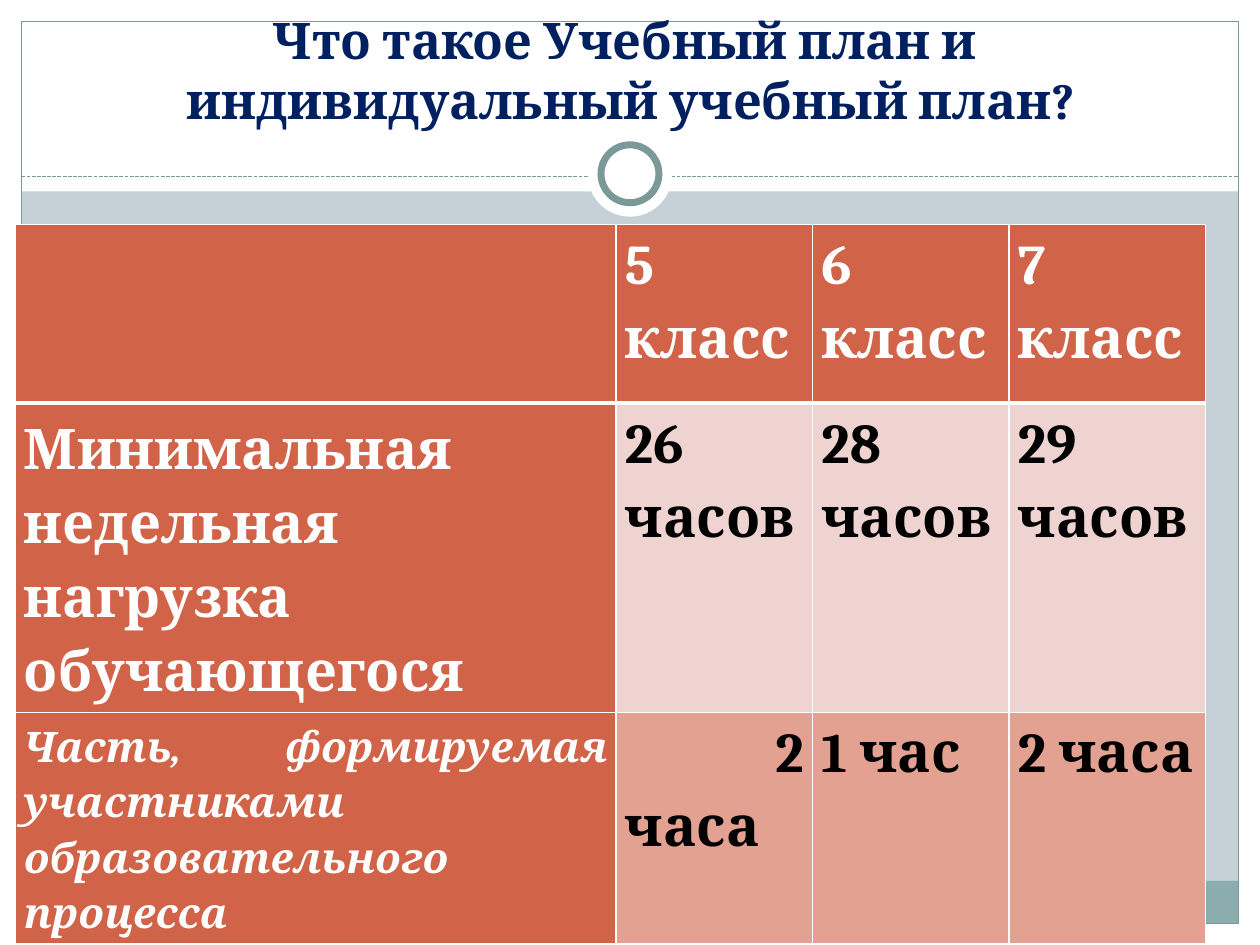
from dataclasses import dataclass
from typing import NamedTuple, Optional

from lxml.etree import SubElement
from pptx import Presentation
from pptx.dml.color import RGBColor
from pptx.enum.dml import MSO_LINE
from pptx.enum.shapes import MSO_CONNECTOR, MSO_SHAPE as Preset
from pptx.enum.text import MSO_ANCHOR as Anchor, PP_ALIGN as Align
from pptx.oxml.ns import qn
from pptx.util import Inches, Pt


@dataclass(frozen=True)
class Theme:
    font: str = "Cambria"
    white: str = "FFFFFF"
    black: str = "000000"
    navy: str = "002060"
    background: str = "C5D1D7"
    footer: str = "8CADAE"
    outline: str = "7C999A"
    header: str = "D16349"
    light_row: str = "EED3D0"
    dark_row: str = "E3A192"
    title_size: float = 28.8
    cell_size: float = 32
    note_size: float = 24


class Box(NamedTuple):
    left: float
    top: float
    width: float
    height: float


class Panel(NamedTuple):
    box: Box
    fill: Optional[str] = None
    line: Optional[str] = None
    line_width: float = 0.75
    preset: Preset = Preset.RECTANGLE


class Row(NamedTuple):
    height: float
    texts: tuple
    fill: str
    color: str
    label_size: float
    label_italic: bool = False
    bottom_border: float = 1


THEME = Theme()
WIDTH, HEIGHT = Inches(10), Inches(7.5)
MARGIN_X, MARGIN_Y = 1.7, 2.27
INNER_X, INNER_Y = 100 - 2 * MARGIN_X, 100 - 2 * MARGIN_Y
DIVIDER_Y = 18.67

PANELS = (
    Panel(Box(0, 100 - MARGIN_Y, 100, MARGIN_Y), THEME.white),
    Panel(Box(0, 0, 100, 20.27), THEME.white),
    Panel(Box(0, 0, MARGIN_X, 100), THEME.white),
    Panel(Box(100 - MARGIN_X, 0, MARGIN_X, 100), THEME.white),
    Panel(Box(MARGIN_X, 93.2, INNER_X, 4.53), THEME.footer),
    Panel(Box(MARGIN_X, MARGIN_Y, INNER_X, INNER_Y), line=THEME.outline),
)
RINGS = (
    Panel(Box(46.65, 14, 6.7, 8.93), THEME.white, preset=Preset.OVAL),
    Panel(Box(47.7, 15.33, 4.6, 6.13), THEME.white, THEME.outline, 4, Preset.OVAL),
)
TITLE = "Что такое Учебный план и \vиндивидуальный учебный план?"
COLUMNS = (47.7, 15.6, 15.6, 15.6)
ROWS = (
    Row(18.93, ("", "5 класс", "6 класс", "7 класс"),
        THEME.header, THEME.white, THEME.cell_size, bottom_border=3),
    Row(31.2, ("Минимальная недельная нагрузка обучающегося",
               "26 часов", "28 часов", "29\nчасов"),
        THEME.light_row, THEME.black, THEME.cell_size),
    Row(23.5, ("Часть, формируемая участниками образовательного процесса",
               " 2 часа", "1 час", "2 часа"),
        THEME.dark_row, THEME.black, THEME.note_size, True),
)


def across(share: float) -> int:
    return round(WIDTH * share / 100)


def down(share: float) -> int:
    return round(HEIGHT * share / 100)


def place(box: Box) -> tuple:
    return across(box.left), down(box.top), across(box.width), down(box.height)


def paint(fill, color: str) -> None:
    fill.solid()
    fill.fore_color.rgb = RGBColor.from_string(color)


def draw_panel(slide, panel: Panel) -> None:
    shape = slide.shapes.add_shape(panel.preset, *place(panel.box))
    shape.shadow.inherit = False
    if panel.fill:
        paint(shape.fill, panel.fill)
    else:
        shape.fill.background()
    if panel.line:
        paint(shape.line.fill, panel.line)
        shape.line.width = Pt(panel.line_width)
    else:
        shape.line.fill.background()


def draw_divider(slide) -> None:
    line = slide.shapes.add_connector(
        MSO_CONNECTOR.STRAIGHT, across(MARGIN_X), down(DIVIDER_Y),
        across(100 - MARGIN_X), down(DIVIDER_Y))
    paint(line.line.fill, THEME.outline)
    line.line.width = Pt(0.75)
    line.line.dash_style = MSO_LINE.SQUARE_DOT
    SubElement(line._element.spPr, qn("a:effectLst"))


def style_text(text_frame, size: float, color: str, align: Align,
               spacing: float = 1, italic: bool = False) -> None:
    for paragraph in text_frame.paragraphs:
        paragraph.alignment = align
        paragraph.line_spacing = spacing
        for run in paragraph.runs:
            font = run.font
            font.name, font.size = THEME.font, Pt(size)
            font.bold, font.italic = True, italic
            font.color.rgb = RGBColor.from_string(color)


def draw_title(slide) -> None:
    text_frame = slide.shapes.add_textbox(*place(Box(1.6, 2.13, 96.9, 12.27))).text_frame
    text_frame.word_wrap = True
    text_frame.vertical_anchor = Anchor.BOTTOM
    text_frame.text = TITLE
    style_text(text_frame, THEME.title_size, THEME.navy, Align.CENTER)


def add_borders(cell, bottom: float, top: float) -> None:
    properties = cell._tc.get_or_add_tcPr()
    for side, width in (("L", 1), ("R", 1), ("T", top), ("B", bottom)):
        border = SubElement(properties, qn(f"a:ln{side}"), w=str(Pt(width)))
        fill = SubElement(border, qn("a:solidFill"))
        SubElement(fill, qn("a:srgbClr"), val=THEME.white)


def draw_cell(cell, text: str, row: Row, is_label: bool, top: float) -> None:
    add_borders(cell, row.bottom_border, top)
    paint(cell.fill, THEME.header if is_label else row.fill)
    cell.margin_left = cell.margin_right = Inches(0.07)
    cell.margin_top = cell.margin_bottom = 0
    cell.vertical_anchor = Anchor.MIDDLE if is_label else Anchor.TOP
    cell.text_frame.text = text
    style_text(cell.text_frame,
               row.label_size if is_label else THEME.cell_size,
               THEME.white if is_label else row.color,
               Align.JUSTIFY, 1.15, is_label and row.label_italic)


def draw_table(slide) -> None:
    box = Box(1.2, 23.73, sum(COLUMNS), sum(row.height for row in ROWS))
    table = slide.shapes.add_table(len(ROWS), len(COLUMNS), *place(box)).table
    for column, width in zip(table.columns, COLUMNS):
        column.width = across(width)
    top = 1
    for row_index, row in enumerate(ROWS):
        table.rows[row_index].height = down(row.height)
        for column_index, text in enumerate(row.texts):
            draw_cell(table.cell(row_index, column_index), text, row, column_index == 0, top)
        top = row.bottom_border


def main() -> None:
    presentation = Presentation()
    presentation.slide_width, presentation.slide_height = WIDTH, HEIGHT
    slide = presentation.slides.add_slide(presentation.slide_layouts[6])
    paint(slide.background.fill, THEME.background)
    for panel in PANELS:
        draw_panel(slide, panel)
    draw_divider(slide)
    for ring in RINGS:
        draw_panel(slide, ring)
    draw_title(slide)
    draw_table(slide)
    presentation.save("out.pptx")


if __name__ == "__main__":
    main()
